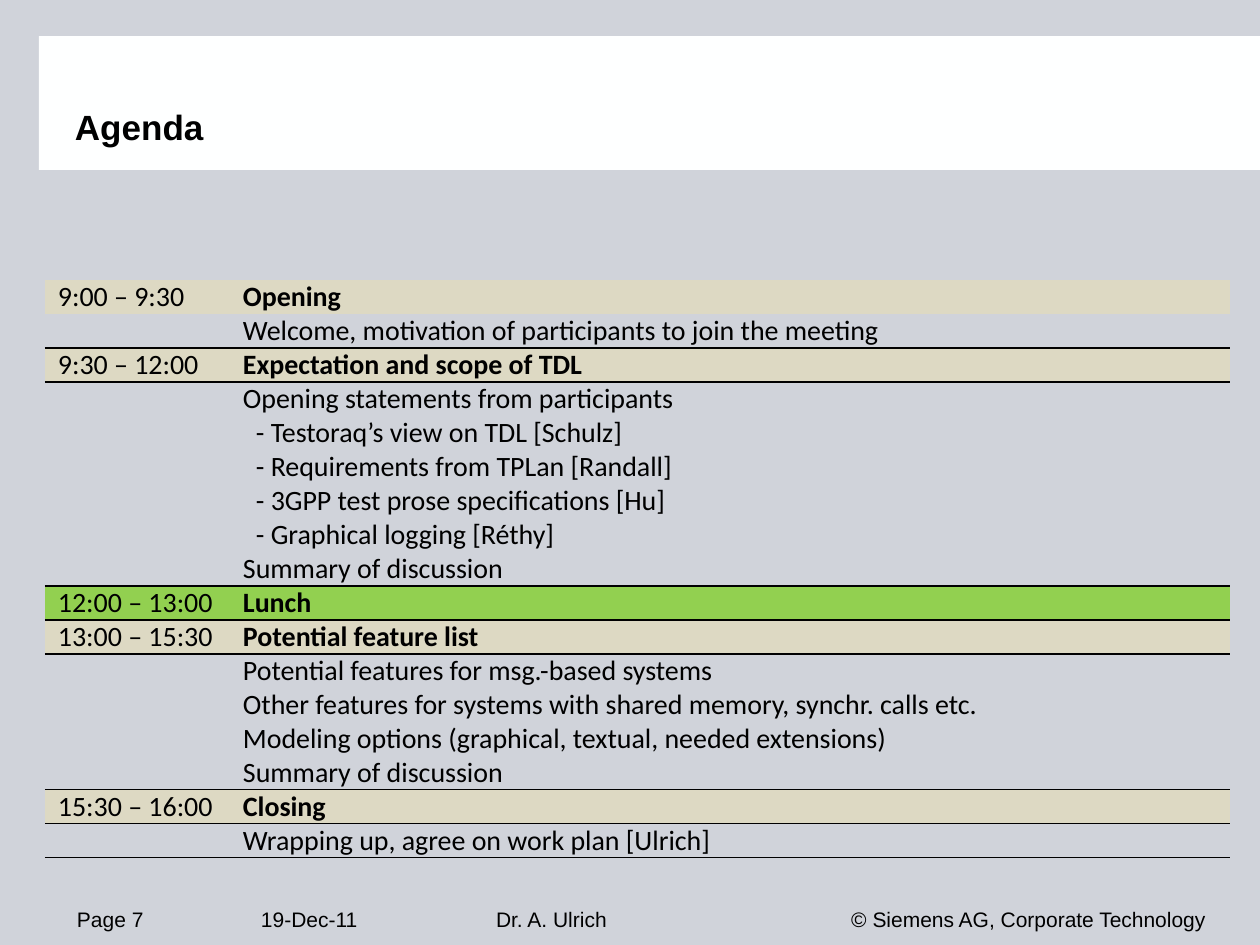
from lxml import etree
from pptx import Presentation
from pptx import util as u
from pptx.dml.color import RGBColor
from pptx.enum import shapes, text
from pptx.oxml import ns

SCALE = 914400 / 126
LINE = 34
PLAIN = "{2D5ABB26-0587-4C30-8999-92F81FD0307C}"
SAND, GREEN = "DDD9C3", "92D050"
BLOCKS = [
    ("9:00 – 9:30", "Opening", SAND,
     [["Welcome, motivation of participants to join the meeting"]]),
    ("9:30 – 12:00", "Expectation and scope of TDL", SAND,
     [["Opening statements from participants",
       "- Testoraq’s view on TDL [Schulz]"],
      ["- Requirements from TPLan [Randall]"],
      ["- 3GPP test prose specifications [Hu]"],
      ["- Graphical logging [Réthy]", "Summary of discussion"]]),
    ("12:00 – 13:00", "Lunch", GREEN, []),
    ("13:00 – 15:30", "Potential feature list", SAND,
     [["Potential features for msg.-based systems"],
      ["Other features for systems with shared memory, synchr. calls etc."],
      ["Modeling options (graphical, textual, needed extensions)",
       "Summary of discussion"]]),
    ("15:30 – 16:00", "Closing", SAND,
     [["Wrapping up, agree on work plan [Ulrich]"]]),
]
FOOTER = [
    ("Page 7", 77, 121, "LEFT"),
    ("19-Dec-11", 261, 134, "LEFT"),
    ("Dr. A. Ulrich", 496, 282, "LEFT"),
    ("© Siemens AG, Corporate Technology", 703, 503, "RIGHT"),
]


def px(n):
    """Turn pixels into EMU."""
    return u.Emu(round(n * SCALE))


def rgb(code):
    """Turn a hex string into a colour."""
    return RGBColor.from_string(code)


def style(para, name, size, bold=False):
    """Set the font of a paragraph."""
    font = para.font
    font.name, font.size, font.bold = name, u.Pt(size), bold
    font.color.rgb = rgb("000000")


def add_panel(slide, box, color):
    """Add a plain filled rectangle."""
    panel = slide.shapes.add_shape(shapes.MSO_SHAPE.RECTANGLE, *map(px, box))
    panel.shadow.inherit = False
    panel.fill.solid()
    panel.fill.fore_color.rgb = rgb(color)
    panel.line.fill.background()


def add_label(slide, words, box, size, bold=False, align="LEFT"):
    """Add a bottom-anchored text box and return its paragraph."""
    frame = slide.shapes.add_textbox(*map(px, box)).text_frame
    frame.word_wrap = True
    frame.vertical_anchor = text.MSO_ANCHOR.BOTTOM
    frame.margin_left = frame.margin_right = 0
    frame.margin_top = frame.margin_bottom = 0
    para = frame.paragraphs[0]
    para.text = words
    para.alignment = text.PP_ALIGN[align]
    style(para, "Arial", size, bold)
    return para


def add_edge(cell, side):
    """Draw a one-point black border on one side of a cell."""
    props = cell._tc.get_or_add_tcPr()
    edge = etree.Element(ns.qn("a:ln" + side), w=str(u.Pt(1)))
    fill = etree.SubElement(edge, ns.qn("a:solidFill"))
    etree.SubElement(fill, ns.qn("a:srgbClr"), val="000000")
    props.insert(0, edge)


def fill_cell(cell, lines, color=None, bold=False, edges=""):
    """Write the lines, fill and borders of a table cell."""
    cell.margin_left = cell.margin_right = px(13)
    cell.margin_top = cell.margin_bottom = 0
    cell.text = "\n".join(lines)
    for para in cell.text_frame.paragraphs:
        if para.text.startswith("- "):
            para._p.get_or_add_pPr().set("marL", str(px(13)))
        style(para, "Calibri", 16, bold)
        if not para.text:
            etree.SubElement(para._p, ns.qn("a:endParaRPr"), sz="1600")
    if color:
        cell.fill.solid()
        cell.fill.fore_color.rgb = rgb(color)
    else:
        cell.fill.background()
    for side in edges:
        add_edge(cell, side)


def list_rows():
    """Return time, lines, colour and borders for each table row."""
    rows = []
    for n, (time, head, color, body) in enumerate(BLOCKS):
        top = "T" if n else ""
        block = [([time], [head], color, top)]
        block += [([], lines, None, "") for lines in body]
        left, right, shade, edges = block[-1]
        block[-1] = (left, right, shade, "B" + edges)
        rows += block
    return rows


def add_agenda(slide):
    """Add the agenda table."""
    rows = list_rows()
    total = LINE * sum(len(row[1]) for row in rows)
    frame = slide.shapes.add_table(
        len(rows), 2, px(45), px(280), px(1185), px(total))
    table = frame.table
    table.first_row = table.horz_banding = False
    table._tbl.tblPr.find(ns.qn("a:tableStyleId")).text = PLAIN
    for col, width in zip(table.columns, (185, 1000)):
        col.width = px(width)
    for n, (time, lines, color, edges) in enumerate(rows):
        table.rows[n].height = px(LINE * len(lines))
        fill_cell(table.cell(n, 0), time, color, False, edges)
        fill_cell(table.cell(n, 1), lines, color, bool(color), edges)


def main():
    """Build and save the slide."""
    deck = Presentation()
    deck.slide_width, deck.slide_height = px(1260), px(945)
    slide = deck.slides.add_slide(deck.slide_layouts[6])
    slide.background.fill.solid()
    slide.background.fill.fore_color.rgb = rgb("D0D3DA")
    add_panel(slide, (39, 36, 1221, 134), "FEFFFF")
    for words, left, width, align in FOOTER:
        add_label(slide, words, (left, 895, width, 37), 12, align=align)
    title = add_label(slide, "Agenda", (75, 37, 847, 111), 20, True)
    title.line_spacing = u.Pt(24)
    add_agenda(slide)
    deck.save("out.pptx")


if __name__ == "__main__":
    main()
